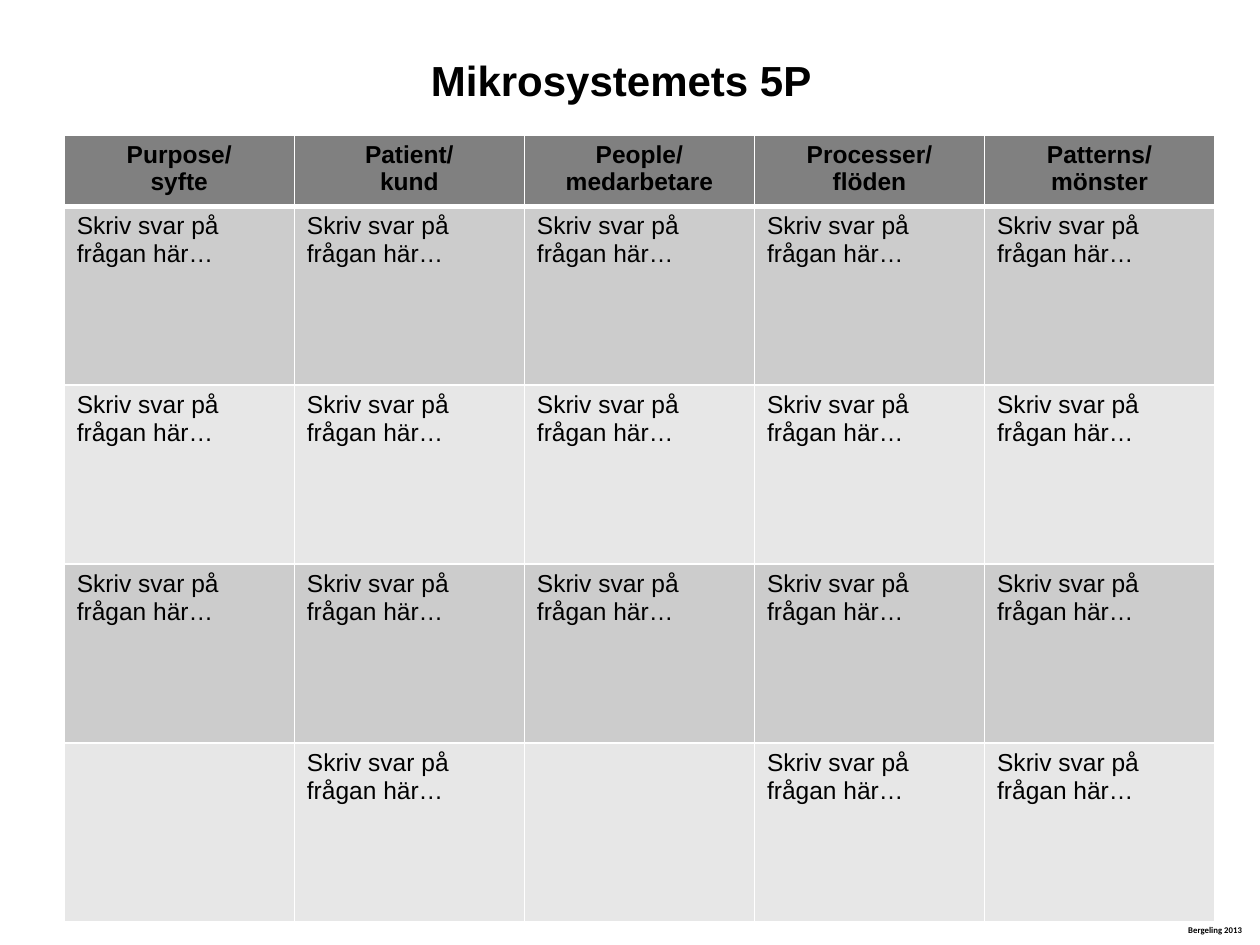
from pptx import Presentation
from pptx.dml.color import RGBColor
from pptx.enum.text import MSO_ANCHOR, PP_ALIGN
from pptx.oxml.ns import qn
from pptx.util import Inches, Pt
from lxml import etree

CENTER, LEFT = PP_ALIGN.CENTER, PP_ALIGN.LEFT
MIDDLE = MSO_ANCHOR.MIDDLE
BLACK = RGBColor(0x00, 0x00, 0x00)
WHITE = RGBColor(0xFF, 0xFF, 0xFF)
HEADER_GRAY = RGBColor(0x80, 0x80, 0x80)
BAND_GRAYS = (RGBColor(0xCC, 0xCC, 0xCC), RGBColor(0xE7, 0xE7, 0xE7))

HEADINGS = ("Purpose/\vsyfte", "Patient/\vkund", "People/\vmedarbetare",
            "Processer/\vflöden", "Patterns/\vmönster")
PROMPT = "Skriv svar på frågan här…"
PROMPTS_PER_COLUMN = (3, 4, 3, 4, 4)
ANSWER_ROWS = max(PROMPTS_PER_COLUMN)


def write(frame, text, size, bold=False, align=CENTER, font="Arial"):
    """Put one formatted paragraph in a text frame."""
    frame.text = text
    paragraph = frame.paragraphs[0]
    paragraph.alignment = align
    for run in paragraph.runs:
        run.font.name = font
        run.font.size = Pt(size)
        run.font.bold = bold
        run.font.color.rgb = BLACK


def set_borders(cell, top=1, bottom=1):
    """Draw white borders around a cell, with widths in points."""
    properties = cell._tc.get_or_add_tcPr()
    for side, width in (("L", 1), ("R", 1), ("T", top), ("B", bottom)):
        line = etree.SubElement(properties, qn(f"a:ln{side}"), w=str(Pt(width)))
        fill = etree.SubElement(line, qn("a:solidFill"))
        etree.SubElement(fill, qn("a:srgbClr"), val=str(WHITE))


def fill_cell(cell, color):
    """Give a cell a solid background."""
    cell.fill.solid()
    cell.fill.fore_color.rgb = color


def add_title(slide):
    """Place and format the slide title."""
    title = slide.shapes.title
    title.left, title.top = Inches(1.61), Inches(0.38)
    title.width, title.height = Inches(6.14), Inches(0.5)
    title.fill.solid()
    title.fill.fore_color.rgb = WHITE
    frame = title.text_frame
    frame.margin_left = Inches(0.6)
    frame.vertical_anchor = MIDDLE
    write(frame, "Mikrosystemets 5P", 24, bold=True)


def add_answer_table(slide):
    """Add the table with one column of answers for each P."""
    table = slide.shapes.add_table(
        ANSWER_ROWS + 1, len(HEADINGS), Inches(0.51), Inches(1.07),
        Inches(9.13), Inches(6.23)).table
    table.rows[0].height = Inches(0.55)
    for row in range(1, ANSWER_ROWS + 1):
        table.rows[row].height = Inches(1.42)

    for column, (heading, prompts) in enumerate(zip(HEADINGS, PROMPTS_PER_COLUMN)):
        header = table.cell(0, column)
        set_borders(header, bottom=3)
        fill_cell(header, HEADER_GRAY)
        write(header.text_frame, heading, 14, bold=True)
        for row in range(1, ANSWER_ROWS + 1):
            answer = table.cell(row, column)
            set_borders(answer, top=3 if row == 1 else 1)
            fill_cell(answer, BAND_GRAYS[(row - 1) % 2])
            if row <= prompts:
                write(answer.text_frame, PROMPT, 14, align=LEFT)


def add_credit(slide):
    """Add the small author line at the lower right."""
    credit = slide.shapes.add_textbox(
        Inches(9.33), Inches(7.29), Inches(0.63), Inches(0.19))
    credit.text_frame.word_wrap = False
    write(credit.text_frame, "Bergeling 2013", 5, bold=True, font="Calibri")


def main():
    """Build the slide and save it."""
    deck = Presentation()
    deck.slide_width, deck.slide_height = Inches(10), Inches(7.5)
    slide = deck.slides.add_slide(deck.slide_layouts[5])
    add_credit(slide)
    add_answer_table(slide)
    add_title(slide)
    deck.save("out.pptx")


if __name__ == "__main__":
    main()
